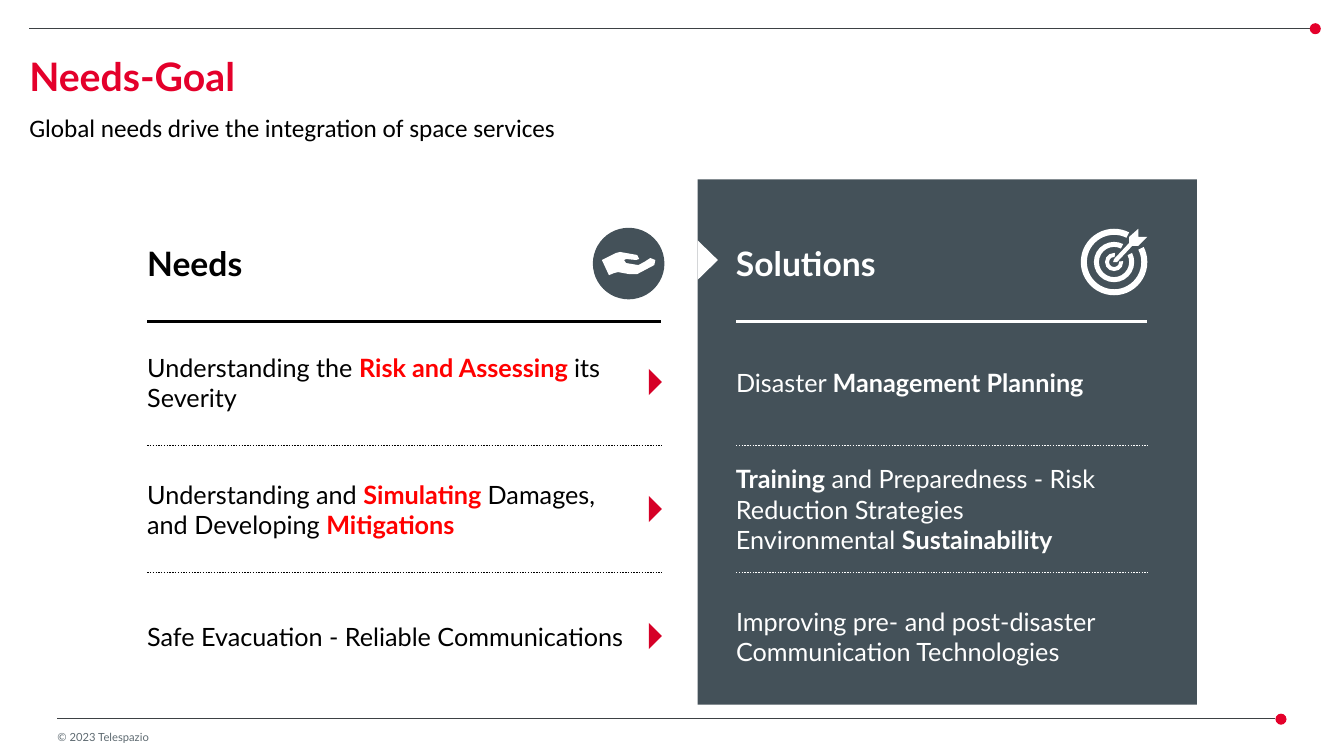
from pptx import Presentation
from pptx.dml.color import RGBColor
from pptx.enum.dml import MSO_LINE
from pptx.enum.shapes import MSO_CONNECTOR, MSO_SHAPE
from pptx.enum.text import MSO_ANCHOR, MSO_AUTO_SIZE, PP_ALIGN
from pptx.oxml.ns import qn
from pptx.util import Emu, Pt

COLORS = {
    "black": "000000",
    "white": "FFFFFF",
    "brand": "E4002B",
    "arrow": "D60027",
    "accent": "FF0000",
    "slate": "445159",
    "rule": "3D4144",
    "footer": "5E6A71",
}
NEEDS = [
    (478, 61, [["Understanding the ", ("Risk and Assessing ", True), "its Severity"]]),
    (489, 61, [["Understanding and ", ("Simulating ", True),
                "Damages, and Developing ", ("Mitigations", True)]]),
    (478, 30, [["Safe Evacuation - Reliable Communications"]]),
]
SOLUTIONS = [
    (441, 30, [["Disaster ", ("Management Planning", True)]]),
    (433, 91, [[("Training", True), " and Preparedness - Risk Reduction Strategies"],
               ["Environmental ", ("Sustainability", True)]]),
    (408, 61, [["Improving pre- and post-disaster Communication Technologies"]]),
]
HAND = [
    (645, 256), (639, 260), (633, 263), (621, 261), (619, 258), (621, 257),
    (631, 258), (634, 257), (632, 253), (615, 250), (611, 251), (597, 258),
    (604, 273), (609, 271), (613, 270), (624, 272), (632, 272), (649, 263),
    (650, 258),
]
DART = [
    (1129, 235), (1129, 227), (1120, 235), (1120, 241), (1105, 257),
    (1104, 260), (1108, 260), (1123, 244), (1129, 244), (1138, 235),
]
TARGET_CENTER = (1105, 260)
TARGET_RINGS = [(33, 27, 18), (20, 15, 18), (9, 5, 39)]
ROW_CENTER, ROW_PITCH = 379, 126
HEADER_CENTER, HEADER_RULE = 261, 319


def px(length):
    """Turn pixels into EMU at 100 pixels to the inch."""
    return Emu(round(length * 9144))


def write(frame, paragraphs, *, size, color="black", accent=None, bold=False,
          font="Lato", anchor=MSO_ANCHOR.MIDDLE, line_spacing=None):
    """Fill a text frame with paragraphs made of plain and (text, True) accented runs."""
    frame.word_wrap = True
    frame.auto_size = MSO_AUTO_SIZE.NONE
    frame.vertical_anchor = anchor
    frame.margin_left = frame.margin_right = 0
    frame.margin_top = frame.margin_bottom = 0
    for index, runs in enumerate(paragraphs):
        paragraph = frame.add_paragraph() if index else frame.paragraphs[0]
        paragraph.alignment = PP_ALIGN.LEFT
        paragraph.space_before = Pt(0)
        paragraph.line_spacing = line_spacing
        for item in runs:
            text, accented = (item, False) if isinstance(item, str) else item
            run = paragraph.add_run()
            run.text = text
            run.font.name = font
            run.font.size = Pt(size)
            run.font.bold = bold or accented
            name = accent if accent and accented else color
            run.font.color.rgb = RGBColor.from_string(COLORS[name])


class SlideBuilder:
    """Place styled elements on one slide in pixel units."""

    def __init__(self, slide):
        """Keep the slide that receives the elements."""
        self.slide = slide

    def placeholder(self, index, left, top, width, height, text, **style):
        """Move and fill a template placeholder without bullets."""
        shape = self.slide.placeholders[index]
        shape.left, shape.top, shape.width, shape.height = map(px, (left, top, width, height))
        properties = shape.text_frame.paragraphs[0]._p.get_or_add_pPr()
        properties.set("marL", "0")
        properties.set("indent", "0")
        properties.append(properties.makeelement(qn("a:buNone"), {}))
        write(shape.text_frame, [[text]], line_spacing=0.9, **style)

    def text(self, left, center, width, height, paragraphs, **style):
        """Add a text box centred on a vertical position."""
        box = self.slide.shapes.add_textbox(
            px(left), px(center - height / 2), px(width), px(height))
        write(box.text_frame, paragraphs, **style)

    def paint(self, shape, color):
        """Give a shape a flat fill with no outline or shadow."""
        shape.shadow.inherit = False
        shape.fill.solid()
        shape.fill.fore_color.rgb = RGBColor.from_string(COLORS[color])
        shape.line.fill.background()
        return shape

    def shape(self, kind, left, top, width, height, color):
        """Add a flat preset shape."""
        shape = self.slide.shapes.add_shape(kind, *map(px, (left, top, width, height)))
        return self.paint(shape, color)

    def pointer(self, center_x, center_y, width, height, color):
        """Add a triangle that points right."""
        triangle = self.shape(MSO_SHAPE.ISOSCELES_TRIANGLE, center_x - width / 2,
                              center_y - height / 2, width, height, color)
        triangle.rotation = 90

    def outline(self, points, color):
        """Add a flat closed polygon."""
        start, *others = [(px(x), px(y)) for x, y in points]
        builder = self.slide.shapes.build_freeform(*start)
        builder.add_line_segments(others, close=True)
        self.paint(builder.convert_to_shape(), color)

    def ring(self, center, outer, inner, half_gap, color):
        """Add a ring that is open toward the upper right."""
        arc = self.shape(MSO_SHAPE.BLOCK_ARC, center[0] - outer, center[1] - outer,
                         2 * outer, 2 * outer, color)
        arc.adjustments[0] = (315 + half_gap) % 360 * 0.6
        arc.adjustments[1] = (315 - half_gap) * 0.6
        arc.adjustments[2] = (outer - inner) / (2 * outer)

    def rule(self, left, right, top, color, weight, dash=None):
        """Add a horizontal line."""
        line = self.slide.shapes.add_connector(
            MSO_CONNECTOR.STRAIGHT, px(left), px(top), px(right), px(top))
        line.line.color.rgb = RGBColor.from_string(COLORS[color])
        line.line.width = Pt(weight)
        if dash:
            line.line.dash_style = dash
        properties = line._element.spPr
        properties.append(properties.makeelement(qn("a:effectLst"), {}))

    def dotted_end_rule(self, left, right, top):
        """Add a thin frame line ending in a dot."""
        self.rule(left, right, top, "rule", 0.75)
        self.shape(MSO_SHAPE.OVAL, right, top - 5, 11, 11, "brand")

    def column(self, heading, rows, left, right, heading_width, color, accent=None):
        """Add a heading with its rule and separated rows."""
        self.text(left, HEADER_CENTER, heading_width, 40, [[heading]],
                  size=24, color=color, bold=True)
        self.rule(left, right, HEADER_RULE, color, 2.25)
        for index, (width, height, paragraphs) in enumerate(rows):
            center = ROW_CENTER + index * ROW_PITCH
            self.text(left, center, width, height, paragraphs,
                      size=18, color=color, accent=accent)
            if index:
                self.rule(left, right, center - ROW_PITCH / 2, color, 1, MSO_LINE.ROUND_DOT)


def main():
    """Build and save the slide."""
    presentation = Presentation()
    presentation.slide_width, presentation.slide_height = px(1333), px(750)
    builder = SlideBuilder(presentation.slides.add_slide(presentation.slide_layouts[1]))

    builder.dotted_end_rule(29, 1299, 28)
    builder.dotted_end_rule(57, 1265, 713)
    builder.text(57, 731, 230, 13, [["© 2023 Telespazio"]], size=8, color="footer")
    builder.placeholder(0, 29, 46, 1276, 53, "Needs-Goal", size=28, color="brand",
                        bold=True, anchor=MSO_ANCHOR.BOTTOM)
    builder.placeholder(1, 29, 115, 1276, 51,
                        "Global needs drive the integration of space services",
                        size=18, font="Calibri", anchor=MSO_ANCHOR.TOP)

    builder.column("Needs", NEEDS, 146, 656, 510, "black", "accent")
    for index in range(len(NEEDS)):
        builder.pointer(650, ROW_CENTER + index * ROW_PITCH, 26, 13, "arrow")
    builder.shape(MSO_SHAPE.OVAL, 588, 226, 71, 71, "slate")
    builder.outline(HAND, "white")

    builder.shape(MSO_SHAPE.RECTANGLE, 692, 178, 495, 521, "slate")
    builder.column("Solutions", SOLUTIONS, 730, 1138, 330, "white")
    builder.pointer(702, 258, 39, 20, "white")
    for outer, inner, half_gap in TARGET_RINGS:
        builder.ring(TARGET_CENTER, outer, inner, half_gap, "white")
    builder.outline(DART, "white")

    presentation.save("out.pptx")


if __name__ == "__main__":
    main()
